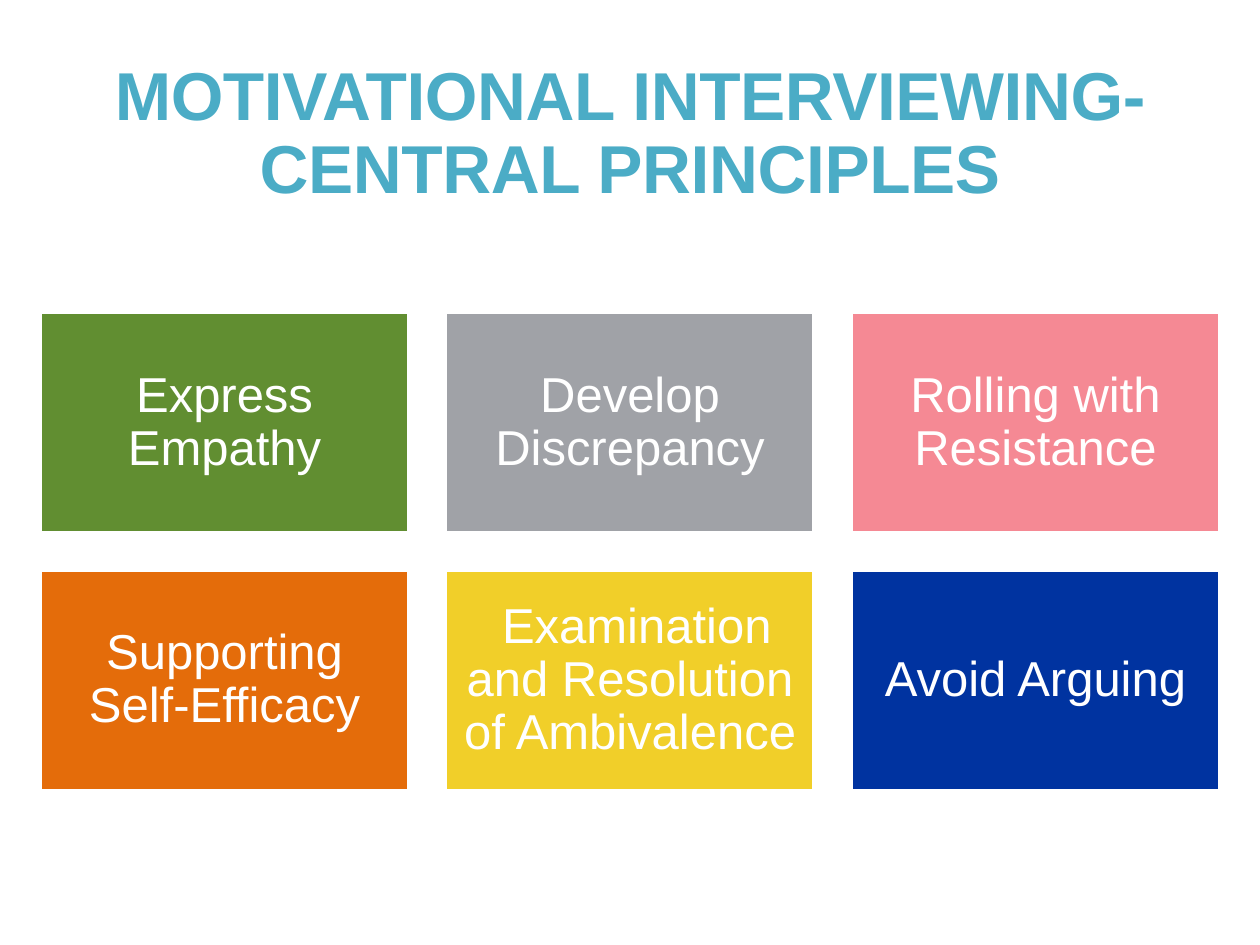
from pptx import Presentation
from pptx.dml.color import RGBColor
from pptx.enum import shapes, text
from pptx.util import Pt

PRINCIPLES = [
    ("Express Empathy", "618E31"),
    ("Develop Discrepancy", "A0A2A7"),
    ("Rolling with Resistance", "F58994"),
    ("Supporting Self-Efficacy", "E46C0A"),
    (" Examination and Resolution of Ambivalence ", "F1CF29"),
    ("Avoid Arguing", "0033A0"),
]


def rgb(value):
    return RGBColor.from_string(value)


def set_text(sp, words, size, color, inset_x, inset_y, bold=False):
    tf = sp.text_frame
    tf.word_wrap = True
    tf.vertical_anchor = text.MSO_ANCHOR.MIDDLE
    tf.margin_left = tf.margin_right = Pt(inset_x)
    tf.margin_top = tf.margin_bottom = Pt(inset_y)
    tf.text = words
    p = tf.paragraphs[0]
    p.alignment = text.PP_ALIGN.CENTER
    p.line_spacing = 0.9
    r = p.runs[0]
    r.font.name = "Arial"
    r.font.size = Pt(size)
    r.font.bold = bold
    r.font.color.rgb = rgb(color)
    return r


def add_title(slide, left, top, width, height):
    sp = slide.shapes.add_textbox(Pt(left), Pt(top), Pt(width), Pt(height))
    r = set_text(sp, "MOTIVATIONAL INTERVIEWING- CENTRAL PRINCIPLES",
                 38.7, "4BACC6", 7.2, 3.6, bold=True)
    r._r.get_or_add_rPr().set("spc", "-20")


def add_principles(slide, left, top, width, height, cols=3, rows=2, gap=21):
    w = (width - gap * (cols - 1)) / cols
    h = (height - gap * (rows - 1)) / rows
    for i, (words, fill) in enumerate(PRINCIPLES):
        row, col = divmod(i, cols)
        sp = slide.shapes.add_shape(
            shapes.MSO_SHAPE.RECTANGLE,
            Pt(left + col * (w + gap)), Pt(top + row * (h + gap)), Pt(w), Pt(h))
        sp.shadow.inherit = False
        sp.fill.solid()
        sp.fill.fore_color.rgb = rgb(fill)
        sp.line.color.rgb = rgb("FFFFFF")
        sp.line.width = Pt(2)
        set_text(sp, words, 28, "FFFFFF", 8.4, 8.4)


def main():
    prs = Presentation()
    prs.slide_width, prs.slide_height = Pt(720), Pt(540)
    slide = prs.slides.add_slide(prs.slide_layouts[6])
    add_title(slide, 23, 25, 674, 104.5)
    add_principles(slide, 23, 178.5, 674, 273.5)
    prs.save("out.pptx")


if __name__ == "__main__":
    main()
